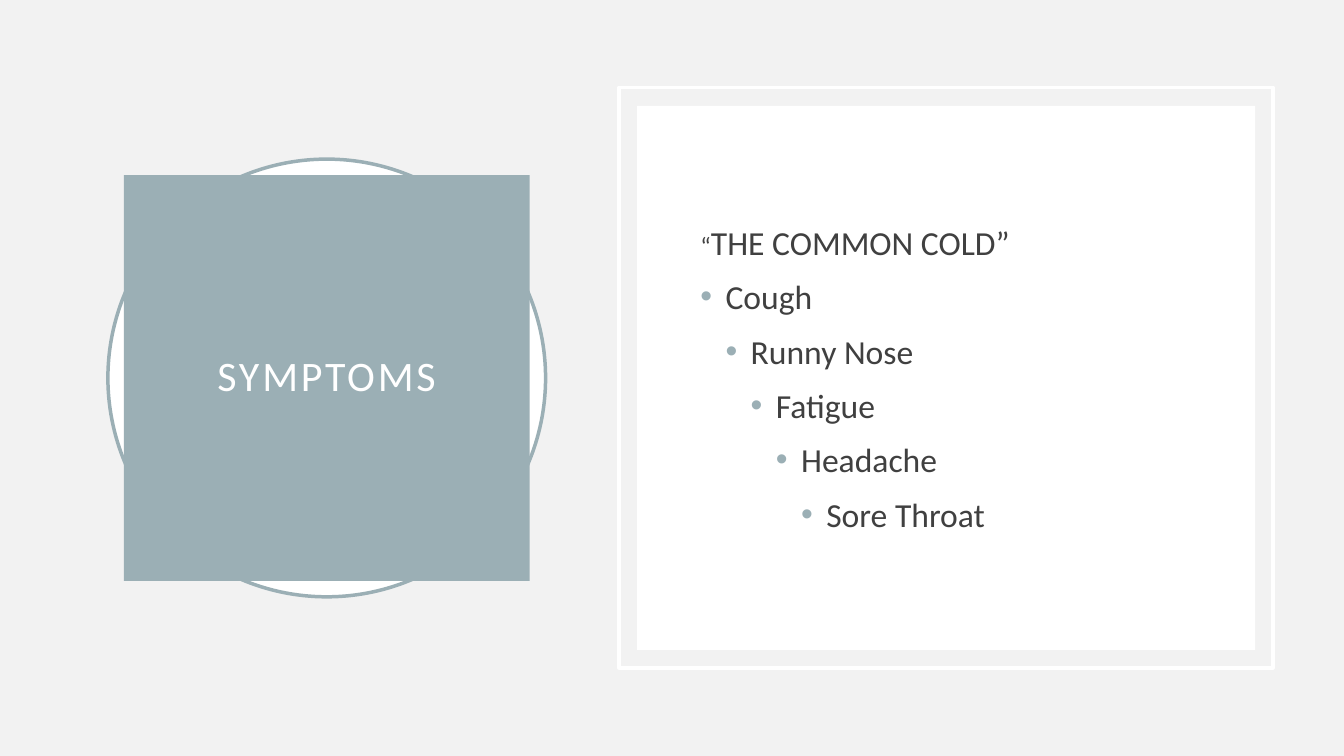
from lxml import etree
from pptx import Presentation
from pptx.dml.color import RGBColor
from pptx.enum.shapes import MSO_SHAPE
from pptx.enum.text import MSO_ANCHOR, PP_ALIGN
from pptx.oxml.ns import qn
from pptx.util import Cm, Pt

OVAL, RECT = MSO_SHAPE.OVAL, MSO_SHAPE.RECTANGLE
MIDDLE, CENTER = MSO_ANCHOR.MIDDLE, PP_ALIGN.CENTER
FONT = "Calibri"
COLORS = {"back": "F2F2F2", "white": "FFFFFF", "accent": "9BAFB5", "text": "404040"}
SYMPTOMS = ["Cough", "Runny Nose", "Fatigue", "Headache", "Sore Throat"]
INDENT = Cm(0.635)


def rgb(name):
    return RGBColor.from_string(COLORS[name])


def add_panel(s, kind, box, fill=None, line=None):
    """Add an unshadowed shape; box is left, top, width, height in cm."""
    sp = s.shapes.add_shape(kind, *[Cm(v) for v in box])
    sp.shadow.inherit = False
    if fill:
        sp.fill.solid()
        sp.fill.fore_color.rgb = rgb(fill)
    else:
        sp.fill.background()
    if line:
        sp.line.color.rgb = rgb(line)
        sp.line.width = Pt(2.5)
    else:
        sp.line.fill.background()
    return sp


prs = Presentation()
prs.slide_width, prs.slide_height = Cm(33.87), Cm(19.05)
s = prs.slides.add_slide(prs.slide_layouts[5])
s.background.fill.solid()
s.background.fill.fore_color.rgb = rgb("back")

# Title square in front of its ring
title = s.shapes.title
ring = add_panel(s, OVAL, (2.72, 4.01, 11.03, 11.03), "white", "accent")
title._element.addprevious(ring._element)
title.left, title.top, title.width, title.height = Cm(3.12), Cm(4.41), Cm(10.23), Cm(10.23)
title.fill.solid()
title.fill.fore_color.rgb = rgb("accent")
tf = title.text_frame
tf.word_wrap = True
tf.vertical_anchor = MIDDLE
tf.margin_left = tf.margin_right = tf.margin_top = tf.margin_bottom = Cm(0.5)
p = tf.paragraphs[0]
p.alignment = CENTER
p.line_spacing = 0.9
r = p.add_run()
r.text = "SYMPTOMS"
r.font.name, r.font.size = FONT, Pt(30)
r.font.color.rgb = rgb("white")
r.font._element.set("spc", "200")

# Framed panel
add_panel(s, RECT, (15.6, 2.2, 16.48, 14.63), line="white")
add_panel(s, RECT, (16.06, 2.67, 15.57, 13.71), "white")

# Symptom list, one level deeper on each line
body = s.shapes.add_textbox(Cm(17.4), Cm(4.01), Cm(12.93), Cm(11.02))
tf = body.text_frame
tf.word_wrap = True
tf.vertical_anchor = MIDDLE
p = tf.paragraphs[0]
for text, size in (("“", 18), ("THE COMMON COLD”", 24)):
    r = p.add_run()
    r.text = text
    r.font.size = Pt(size)
for level, symptom in enumerate(SYMPTOMS):
    p = tf.add_paragraph()
    p.text = symptom
    p.level = level
    p.font.size = Pt(24)
    pPr = p._p.get_or_add_pPr()
    pPr.set("marL", str(INDENT * (level + 1)))
    pPr.set("indent", str(-INDENT))
    bullet_color = etree.Element(qn("a:buClr"))
    etree.SubElement(bullet_color, qn("a:srgbClr"), val=COLORS["accent"])
    bullet_font = etree.Element(qn("a:buFont"), typeface="Arial")
    bullet = etree.Element(qn("a:buChar"), char="•")
    for element in (bullet_color, bullet_font, bullet):
        pPr.find(qn("a:defRPr")).addprevious(element)
for p in tf.paragraphs:
    p.space_before = Pt(10)
    p.font.name = FONT
    p.font.color.rgb = rgb("text")

prs.save("out.pptx")
